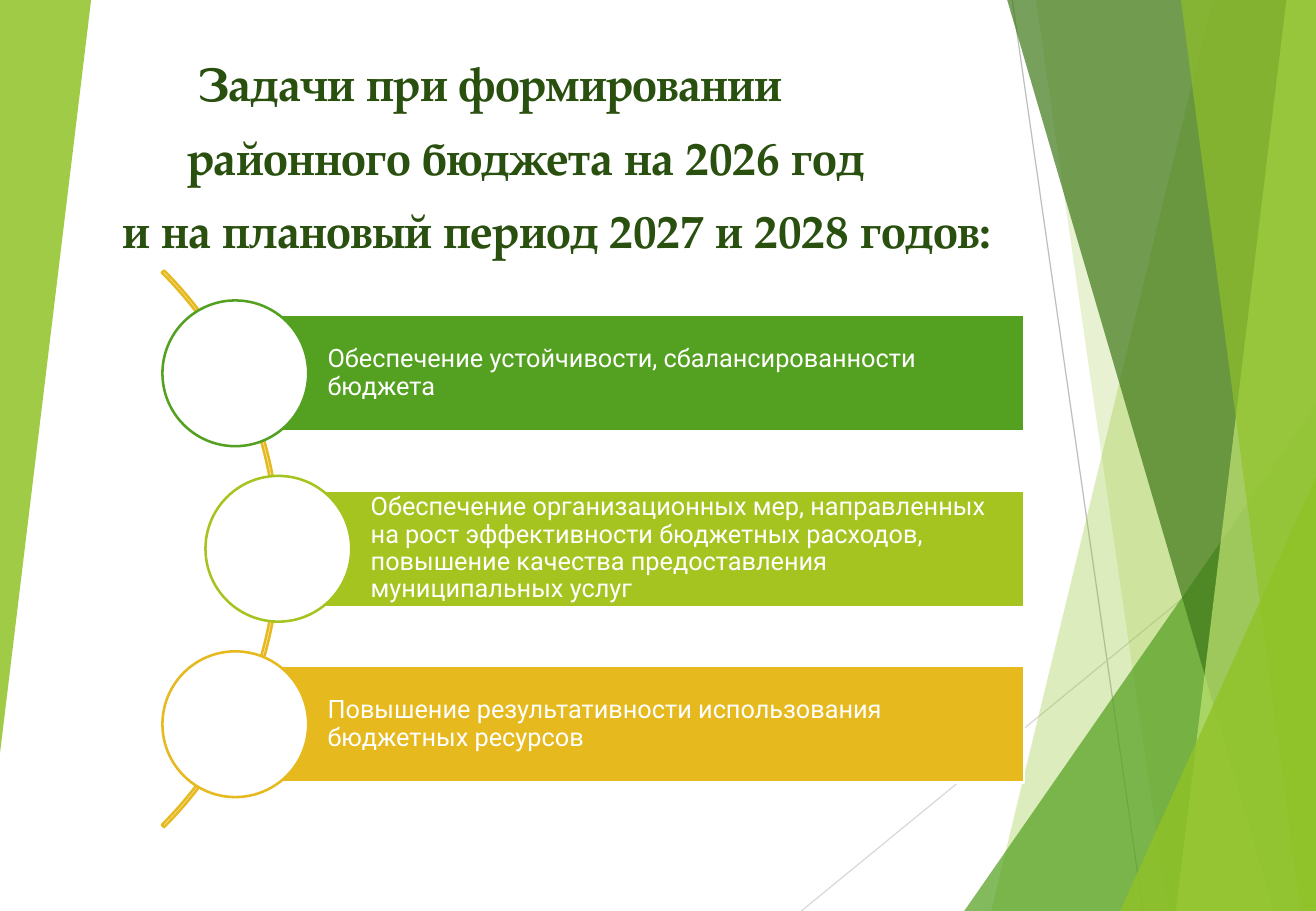
import pptx
import pptx.dml.color
import pptx.enum.shapes
import pptx.enum.text
import pptx.oxml.ns
import pptx.util
from lxml import etree

Pt = pptx.util.Pt
Shapes = pptx.enum.shapes.MSO_SHAPE
Align = pptx.enum.text.PP_ALIGN
Anchor = pptx.enum.text.MSO_ANCHOR
qn = pptx.oxml.ns.qn

WIDTH, HEIGHT = 780, 540
LIME, GREEN, GOLD, OLIVE = "90C226", "54A021", "E6B91E", "A5C41F"
WHITE, TITLE_COLOR = "FFFFFF", "2A5010"


def rgb(value):
    return pptx.dml.color.RGBColor.from_string(value)


class SlideBuilder:
    title_font, body_font = "TeX Gyre Pagella", "Roboto"

    def __init__(self, slide):
        self.slide = slide
        self.shapes = slide.shapes

    def style(self, shape, fill=None, opacity=100, line=None, width=1.5):
        shape.shadow.inherit = False
        if fill:
            shape.fill.solid()
            shape.fill.fore_color.rgb = rgb(fill)
            if opacity < 100:
                color = shape._element.spPr.find(qn("a:solidFill")).find(qn("a:srgbClr"))
                etree.SubElement(color, qn("a:alpha"), val=str(opacity * 1000))
        else:
            shape.fill.background()
        if line:
            shape.line.color.rgb = rgb(line)
            shape.line.width = Pt(width)
        else:
            shape.line.fill.background()
        return shape

    def preset(self, kind, left, top, width, height, adjustments=(), **style):
        shape = self.shapes.add_shape(kind, Pt(left), Pt(top), Pt(width), Pt(height))
        for index, value in enumerate(adjustments):
            shape.adjustments[index] = value
        return self.style(shape, **style)

    def triangle(self, left, top, width, height, opacity, color=LIME):
        return self.preset(Shapes.ISOSCELES_TRIANGLE, left, top, width, height,
                           [1], fill=color, opacity=opacity)

    def band(self, top_x, bottom_x, color, opacity):
        """Full-height panel with a slanted left side, reaching the right edge."""
        points = [(WIDTH, 0), (WIDTH, HEIGHT), (bottom_x, HEIGHT)]
        builder = self.shapes.build_freeform(Pt(top_x), 0, scale=1.0)
        builder.add_line_segments([(Pt(x), Pt(y)) for x, y in points], close=True)
        self.style(builder.convert_to_shape(), fill=color, opacity=opacity)

    def line(self, start, end, color):
        connector = self.shapes.add_connector(
            pptx.enum.shapes.MSO_CONNECTOR.STRAIGHT, *map(Pt, start + end))
        connector.line.color.rgb = rgb(color)
        connector.line.width = Pt(0.75)
        etree.SubElement(connector._element.spPr, qn("a:effectLst"))

    def fill_paragraph(self, paragraph, text, font, size, color, bold=False):
        paragraph.text = text
        for run in paragraph.runs:
            run.font.name = font
            run.font.size = Pt(size)
            run.font.bold = bold
            run.font.color.rgb = rgb(color)

    def title(self, left, top, width, height, lines):
        """Each line is (text, left indent); an indent of None means centred."""
        frame = self.shapes.add_textbox(Pt(left), Pt(top), Pt(width), Pt(height)).text_frame
        frame.word_wrap = True
        for index, (text, indent) in enumerate(lines):
            paragraph = frame.add_paragraph() if index else frame.paragraphs[0]
            self.fill_paragraph(paragraph, text, self.title_font, 28, TITLE_COLOR, bold=True)
            paragraph.space_before = Pt(10)
            if indent is None:
                paragraph.alignment = Align.CENTER
            else:
                paragraph.alignment = Align.LEFT
                paragraph._p.get_or_add_pPr().set("marL", str(Pt(indent)))

    def task(self, left, right, middle, text, color):
        """Coloured bar with a white circle centred on its left end."""
        height, diameter = 69, 86.4
        bar = self.preset(Shapes.RECTANGLE, left, middle - height / 2,
                          right - left, height, fill=color, line=WHITE)
        frame = bar.text_frame
        frame.word_wrap = True
        frame.vertical_anchor = Anchor.MIDDLE
        frame.margin_left = Pt(54.7)
        frame.margin_top = frame.margin_right = frame.margin_bottom = Pt(3)
        paragraph = frame.paragraphs[0]
        self.fill_paragraph(paragraph, text, self.body_font, 15, WHITE)
        paragraph.alignment = Align.LEFT
        paragraph.line_spacing = 0.9
        self.preset(Shapes.OVAL, left - diameter / 2, middle - diameter / 2,
                    diameter, diameter, fill=WHITE, line=color)


def main():
    presentation = pptx.Presentation()
    presentation.slide_width, presentation.slide_height = Pt(WIDTH), Pt(HEIGHT)
    builder = SlideBuilder(presentation.slides.add_slide(presentation.slide_layouts[6]))

    # Background facets
    builder.line((600, 0), (677.5, HEIGHT), "BFBFBF")
    builder.line((WIDTH, 290), (475, HEIGHT), "D9D9D9")
    builder.band(718.5, 587.5, LIME, 30)
    builder.band(614, 692, LIME, 20)
    builder.triangle(571.5, 240, 208.5, 300, 72, GREEN)
    builder.band(597, 755, "3F7819", 70)
    builder.band(762.5, 697, "C0E474", 70)
    builder.band(700, 771, LIME, 65)
    builder.triangle(664, 283, 116, 257, 80)
    builder.triangle(0, 0, 54, 446.5, 85).rotation = 180

    # Title
    builder.title(0, 28.8, 660, 482, [
        ("Задачи при формировании", 110.5),
        ("районного бюджета на 2026 год", 104),
        ("и на плановый период 2027 и 2028 годов:", None),
    ])

    # Arc joining the tasks
    middle, pitch, radius = 325.3, 104, 233.3
    builder.preset(Shapes.BLOCK_ARC, -67.7 - radius, middle - radius,
                   2 * radius, 2 * radius, [189, 27, 0.004], line=GOLD)

    # Tasks
    tasks = [
        (139.5, GREEN, "Обеспечение устойчивости, сбалансированности бюджета"),
        (165, OLIVE, "Обеспечение организационных мер, направленных на рост "
                     "эффективности бюджетных расходов, повышение качества "
                     "предоставления муниципальных услуг"),
        (139.5, GOLD, "Повышение результативности использования бюджетных ресурсов"),
    ]
    for row, (left, color, text) in enumerate(tasks):
        builder.task(left, 607, middle + (row - 1) * pitch, text, color)

    presentation.save("out.pptx")


if __name__ == "__main__":
    main()
